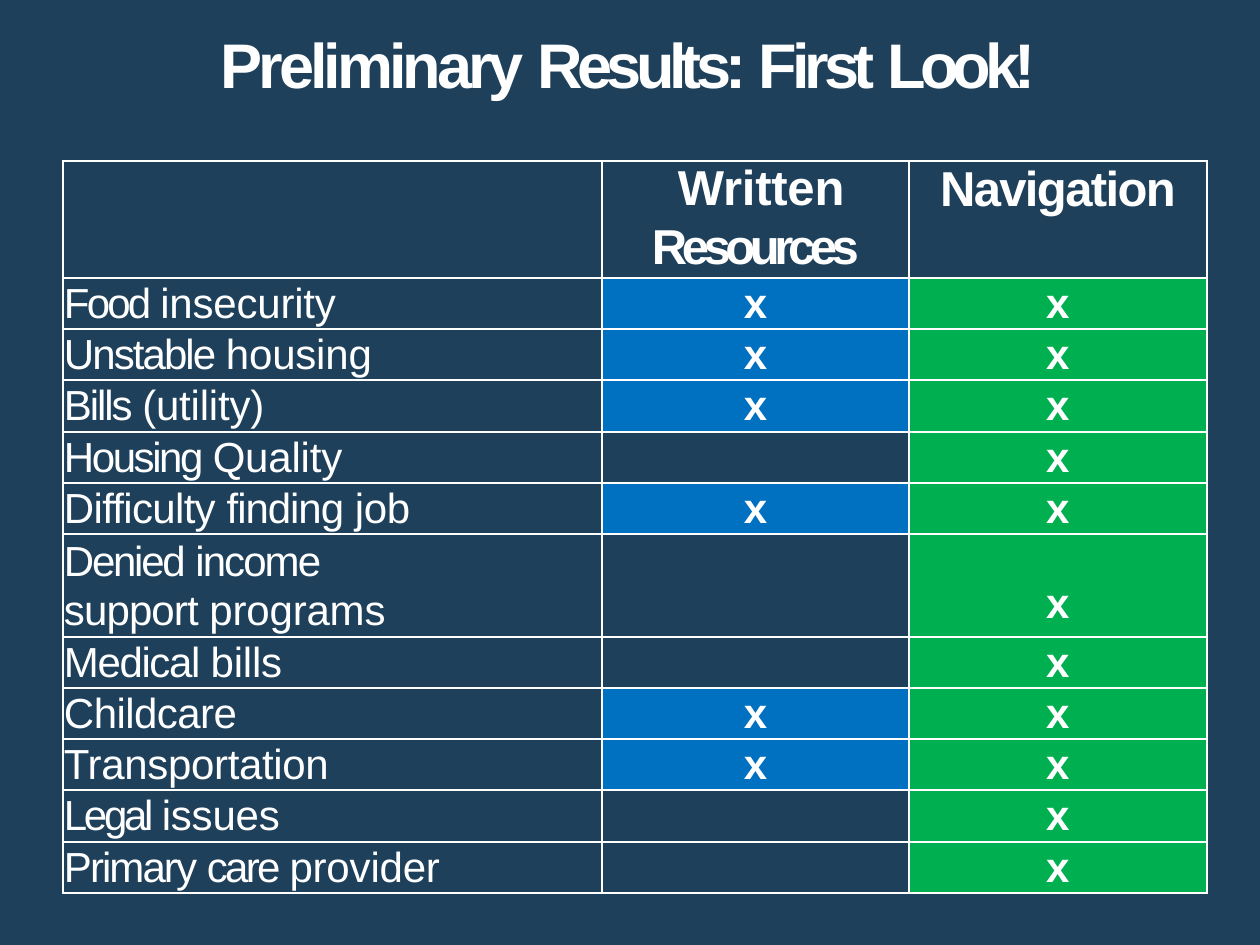
from lxml import etree
from pptx import Presentation
from pptx import util as u
from pptx.dml.color import RGBColor
from pptx.enum import text
from pptx.oxml.ns import qn

SCALE = u.Inches(1) / 126  # EMU in one px
COLOURS = {"navy": "1F405A", "white": "FFFFFF", "blue": "0070C0", "green": "00B050"}
LEFT, CENTRE = text.PP_ALIGN.LEFT, text.PP_ALIGN.CENTER

TITLE = [("Preliminary ", -2.3), ("Results: ", -3.2), ("First ", -2.9), ("Look!", -3.3)]
COLUMNS = [539, 307, 298]
HEADER_HEIGHT, BODY_HEIGHT = 117, 615
LINE = 28.2  # points between body lines

# Label runs with letter spacing, then whether written resources cover the need
NEEDS = [
    ([("Food ", -1.6), ("insecurity", -0.1)], True),
    ([("Unstable ", -1.1), ("housing", -0.1)], True),
    ([("Bills ", -1.2), ("(utility)", -0.1)], True),
    ([("Housing ", -1.4), ("Quality", -0.1)], False),
    ([("Difficulty ", -0.4), ("finding ", -0.6), ("job", -0.2)], True),
    ([("Denied", -1.3), (" income ", -1.1), ("support ", -0.5), ("programs", -0.1)], False),
    ([("Medical ", -0.8), ("bills", -0.1)], False),
    ([("Childcare", -0.3)], True),
    ([("Transportation", -0.2)], True),
    ([("Legal ", -1.9), ("issues", -0.1)], False),
    ([("Primary ", -1.1), ("care ", -1.5), ("provider", -0.1)], False),
]
TALL = 5  # index of the need that takes two lines


def px(length):
    return u.Emu(round(length * SCALE))


def colour(name):
    return RGBColor.from_string(COLOURS[name])


def apply(target, values):
    for name, value in values.items():
        setattr(target, name, value)


class SlideBuilder:
    def __init__(self, deck):
        self.font = {"name": "Arial", "size": u.Pt(24), "bold": False}
        self.slide = deck.slides.add_slide(deck.slide_layouts[5])
        fill = self.slide.background.fill
        fill.solid()
        fill.fore_color.rgb = colour("navy")

    def add_runs(self, para, runs, align=LEFT, indent=0, line=None, **font):
        """Add (text, letter spacing in points) runs to a paragraph."""
        para.alignment = align
        if line:
            para.line_spacing = u.Pt(line)
        props = para._p.get_or_add_pPr()
        props.set("marL", str(px(indent)))
        props.set("indent", "0")
        for words, spacing in runs:
            span = para.add_run()
            span.text = words
            apply(span.font, {**self.font, **font})
            span.font.color.rgb = colour("white")
            span.font._element.set("spc", str(round(spacing * 100)))

    def title(self, left, top, width, height, runs, indent):
        box = self.slide.shapes.title
        apply(box, {"left": px(left), "top": px(top), "width": px(width), "height": px(height)})
        frame = box.text_frame
        apply(frame, {"margin_left": 0, "margin_right": 0, "margin_top": px(1),
                      "margin_bottom": 0, "word_wrap": True,
                      "vertical_anchor": text.MSO_ANCHOR.MIDDLE})
        self.add_runs(frame.paragraphs[0], runs, indent=indent, size=u.Pt(36), bold=True)

    def table(self, left, top, widths, heights):
        frame = self.slide.shapes.add_table(len(heights), len(widths), px(left), px(top),
                                            px(sum(widths)), px(sum(heights)))
        grid = frame.table
        apply(grid, {"first_row": False, "horz_banding": False})
        for column, width in zip(grid.columns, widths):
            column.width = px(width)
        for row, height in zip(grid.rows, heights):
            row.height = px(height)
        for cell in grid.iter_cells():
            apply(cell, dict.fromkeys(
                ("margin_left", "margin_right", "margin_top", "margin_bottom"), 0))
            cell.fill.background()
            self.border(cell)
        return grid

    def border(self, cell):
        props = cell._tc.get_or_add_tcPr()
        for place, side in enumerate(("a:lnL", "a:lnR", "a:lnT", "a:lnB")):
            line = etree.Element(qn(side), w=str(u.Pt(1)))
            fill = etree.SubElement(line, qn("a:solidFill"))
            etree.SubElement(fill, qn("a:srgbClr"), val=COLOURS["white"])
            props.insert(place, line)

    def mark(self, cell, fill):
        cell.fill.solid()
        cell.fill.fore_color.rgb = colour(fill)
        self.add_runs(cell.text_frame.paragraphs[0], [("x", -0.5)], CENTRE, line=LINE, bold=True)


def row_heights():
    """Share the body height evenly, with two parts for the tall row."""
    parts = [2 if index == TALL else 1 for index in range(len(NEEDS))]
    edges = [round(BODY_HEIGHT * sum(parts[:n]) / sum(parts)) for n in range(len(parts) + 1)]
    return [HEADER_HEIGHT] + [end - start for start, end in zip(edges, edges[1:])]


def main():
    deck = Presentation()
    apply(deck, {"slide_width": px(1260), "slide_height": px(945)})
    page = SlideBuilder(deck)
    page.title(129, 19, 1031, 88, TITLE, indent=92)

    grid = page.table(63, 161, COLUMNS, row_heights())
    heading = {"size": u.Pt(28), "bold": True}
    written = grid.cell(0, 1).text_frame
    page.add_runs(written.paragraphs[0], [("Written", -0.1)], indent=76, line=31.4, **heading)
    page.add_runs(written.add_paragraph(), [("Resources", -3.1)], indent=50, line=33.4, **heading)
    page.add_runs(grid.cell(0, 2).text_frame.paragraphs[0], [("Navigation", -0.9)],
                  CENTRE, line=31.6, **heading)

    for row, (label, in_writing) in enumerate(NEEDS, start=1):
        page.add_runs(grid.cell(row, 0).text_frame.paragraphs[0], label, indent=1, line=LINE)
        if in_writing:
            page.mark(grid.cell(row, 1), "blue")
        page.mark(grid.cell(row, 2), "green")

    apply(grid.cell(TALL + 1, 0), {"margin_top": px(2), "margin_right": px(180)})
    apply(grid.cell(TALL + 1, 2), {"vertical_anchor": text.MSO_ANCHOR.BOTTOM,
                                   "margin_bottom": px(10)})
    deck.save("out.pptx")


if __name__ == "__main__":
    main()
